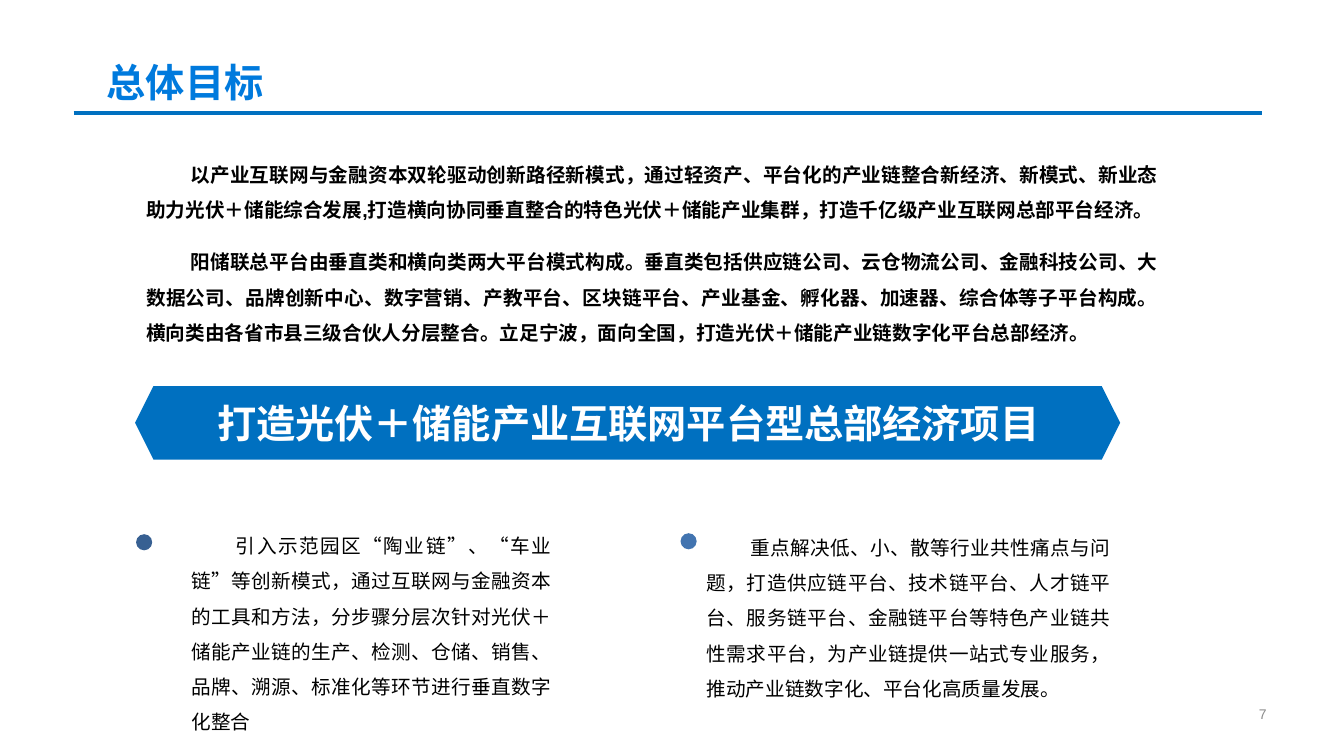
from dataclasses import dataclass

from lxml import etree
from pptx import Presentation
from pptx.dml.color import RGBColor
from pptx.enum.shapes import MSO_CONNECTOR, MSO_SHAPE
from pptx.enum.text import MSO_ANCHOR, MSO_AUTO_SIZE, PP_ALIGN
from pptx.oxml.ns import qn
from pptx.util import Pt

STRAIGHT = MSO_CONNECTOR.STRAIGHT
HEXAGON, OVAL = MSO_SHAPE.HEXAGON, MSO_SHAPE.OVAL
TOP, MIDDLE = MSO_ANCHOR.TOP, MSO_ANCHOR.MIDDLE
LEFT, CENTER, RIGHT, JUSTIFY = PP_ALIGN.LEFT, PP_ALIGN.CENTER, PP_ALIGN.RIGHT, PP_ALIGN.JUSTIFY
FIXED = MSO_AUTO_SIZE.NONE

EMU_PER_PX = 9144
FIRST_LINE_INDENT = 44
DOT_SIZE = 16


@dataclass(frozen=True)
class Theme:
    latin: str = "Arial"
    chinese: str = "Noto Sans CJK SC"
    blue: str = "0070C0"
    title: str = "007ADD"
    ink: str = "000000"
    white: str = "FFFFFF"
    grey: str = "8C8C8C"
    left_dot: str = "376092"
    right_dot: str = "4274B0"
    heading_size: int = 28
    body_size: int = 14
    number_size: int = 10


def px(length):
    return length * EMU_PER_PX


class SlideBuilder:
    def __init__(self, page, theme):
        self.page = page
        self.theme = theme

    def frame(self, box, place, margins=(10, 5), anchor=TOP):
        box.left, box.top, box.width, box.height = map(px, place)
        frame = box.text_frame
        frame.word_wrap = True
        frame.auto_size = FIXED
        frame.vertical_anchor = anchor
        frame.margin_left = frame.margin_right = px(margins[0])
        frame.margin_top = frame.margin_bottom = px(margins[1])
        return frame

    def text_box(self, place, **options):
        box = self.page.shapes.add_textbox(*map(px, place))
        return self.frame(box, place, **options)

    def span(self, para, text, size, color, bold=False, latin=None):
        span = para.add_run()
        span.text = text
        font = span.font
        font.size = Pt(size)
        font.bold = bold
        font.color.rgb = RGBColor.from_string(color)
        font.name = latin or self.theme.latin
        properties = span._r.get_or_add_rPr()
        etree.SubElement(properties, qn("a:ea"), typeface=self.theme.chinese)

    def line_of_text(self, frame, text, size, color, align, bold=False):
        para = frame.paragraphs[0]
        para.alignment = align
        self.span(para, text, size, color, bold)

    def body_para(self, para, text, bold=False):
        para.alignment = JUSTIFY
        para.line_spacing = 1.5
        para.space_before = para.space_after = Pt(6)
        properties = para._p.get_or_add_pPr()
        properties.set("marL", "0")
        properties.set("indent", str(px(FIRST_LINE_INDENT)))
        etree.SubElement(properties, qn("a:buNone"))
        self.span(para, text, self.theme.body_size, self.theme.ink, bold)

    def shape(self, kind, place, color):
        shape = self.page.shapes.add_shape(kind, *map(px, place))
        shape.shadow.inherit = False
        shape.fill.solid()
        shape.fill.fore_color.rgb = RGBColor.from_string(color)
        shape.line.fill.background()
        return shape

    def rule(self, start, end, color, weight):
        rule = self.page.shapes.add_connector(STRAIGHT, *map(px, start + end))
        rule.line.color.rgb = RGBColor.from_string(color)
        rule.line.width = Pt(weight)
        etree.SubElement(rule._element.spPr, qn("a:effectLst"))


def main():
    theme = Theme()
    deck = Presentation()
    deck.slide_width, deck.slide_height = px(1333), px(750)
    page = deck.slides.add_slide(deck.slide_layouts[1])
    builder = SlideBuilder(page, theme)

    builder.rule((73, 112), (1252, 112), theme.blue, 3.25)
    title = builder.frame(page.shapes.title, (96, 53, 275, 57))
    builder.line_of_text(title, "总体目标", theme.heading_size, theme.title, LEFT, bold=True)

    goals = (
        "以产业互联网与金融资本双轮驱动创新路径新模式，通过轻资产、平台化的产业链整合新经济、新模式、新业态"
        "助力光伏＋储能综合发展,打造横向协同垂直整合的特色光伏＋储能产业集群，打造千亿级产业互联网总部平台经济。",
        "阳储联总平台由垂直类和横向类两大平台模式构成。垂直类包括供应链公司、云仓物流公司、金融科技公司、"
        "大数据公司、品牌创新中心、数字营销、产教平台、区块链平台、产业基金、孵化器、加速器、综合体等子平台构成。"
        "横向类由各省市县三级合伙人分层整合。立足宁波，面向全国，打造光伏＋储能产业链数字化平台总部经济。",
    )
    intro = builder.frame(page.placeholders[1], (135, 145, 1024, 204))
    for index, goal in enumerate(goals):
        para = intro.add_paragraph() if index else intro.paragraphs[0]
        builder.body_para(para, goal, bold=True)

    banner = builder.shape(HEXAGON, (134, 383, 977, 73), theme.blue)
    banner.adjustments[0] = 0.25
    slogan = builder.text_box((197, 392, 852, 55), margins=(7, 4))
    builder.line_of_text(slogan, "打造光伏＋储能产业互联网平台型总部经济项目",
                         theme.heading_size, theme.white, CENTER, bold=True)

    columns = (
        ((135, 530), theme.left_dot, (190, 518, 357, 177), (0, 0),
         "引入示范园区“陶业链”、“车业链”等创新模式，通过互联网与金融资本的工具和方法，分步骤分层次针对"
         "光伏＋储能产业链的生产、检测、仓储、销售、品牌、溯源、标准化等环节进行垂直数字化整合", ""),
        ((675, 529), theme.right_dot, (691, 515, 420, 187), (10, 5),
         "重点解决低、小、散等行业共性痛点与问题，打造供应链平台、技术链平台、人才链平台、服务链平台、"
         "金融链平台等特色产业链共性需求平台，为产业链提供一站式专业服务，推动产业链数字化、平台化高质量发展", "。"),
    )
    for corner, color, place, margins, text, full_stop in columns:
        builder.shape(OVAL, (*corner, DOT_SIZE, DOT_SIZE), color)
        para = builder.text_box(place, margins=margins).paragraphs[0]
        builder.body_para(para, text)
        if full_stop:
            builder.span(para, full_stop, theme.body_size, theme.ink, latin=theme.chinese)

    number = builder.text_box((971, 691, 295, 35), anchor=MIDDLE)
    builder.line_of_text(number, "7", theme.number_size, theme.grey, RIGHT)

    deck.save("out.pptx")


if __name__ == "__main__":
    main()
